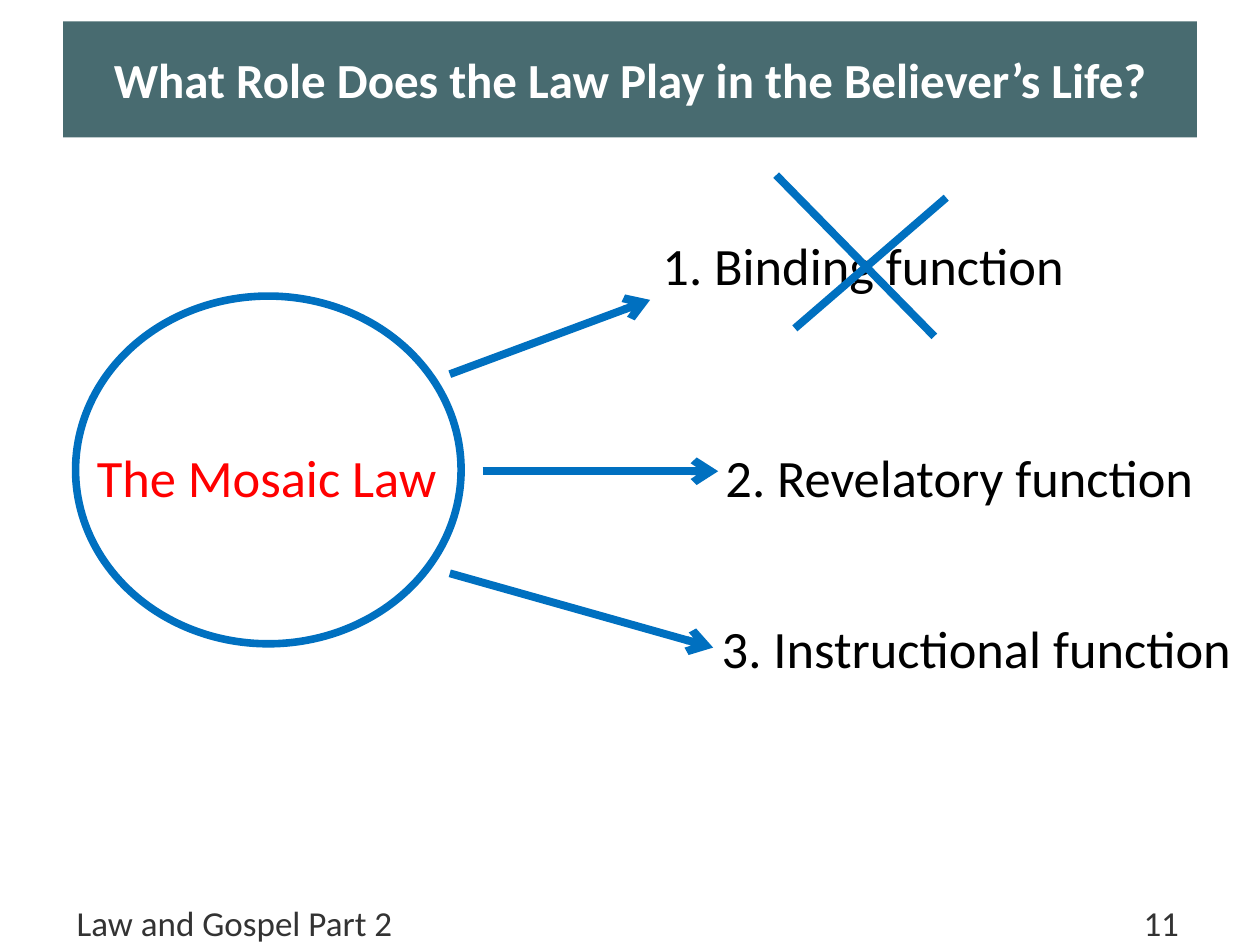
from lxml.etree import SubElement
from pptx import Presentation
from pptx.dml.color import RGBColor
from pptx.enum.shapes import MSO_CONNECTOR as Line, MSO_SHAPE as Shape
from pptx.enum.text import MSO_ANCHOR as Anchor, PP_ALIGN as Align
from pptx.oxml.ns import qn
from pptx.util import Inches, Pt

COLORS = {"teal": "486B70", "blue": "0070C0", "red": "FF0000",
          "black": "000000", "white": "FFFFFF", "gray": "333333"}
FONT = "Calibri"
CELL = Inches(0.1)  # the slide is a grid of 100 columns by 75 rows


def color(name):
    return RGBColor.from_string(COLORS[name])


def grid(*cells):
    return [round(n * CELL) for n in cells]


def style(par, size, tone, bold=False):
    for run in par.runs:
        font = run.font
        font.name, font.size, font.bold = FONT, Pt(size), bold
        font.color.rgb = color(tone)


def label(slide, text, box, size, tone):
    frame = slide.shapes.add_textbox(*grid(*box)).text_frame
    frame.word_wrap = True
    frame.text = text
    style(frame.paragraphs[0], size, tone)
    return frame


def stroke(slide, start, end, arrow=False):
    link = slide.shapes.add_connector(Line.STRAIGHT, *grid(*start, *end))
    link.line.color.rgb = color("blue")
    link.line.width = Pt(4.5)
    if arrow:
        SubElement(link.line._get_or_add_ln(), qn("a:tailEnd"), type="arrow")
    SubElement(link._element.spPr, qn("a:effectLst"))


# Title bar
def header(slide, text, box):
    title = slide.shapes.title
    title.left, title.top, title.width, title.height = grid(*box)
    title.fill.solid()
    title.fill.fore_color.rgb = color("teal")
    frame = title.text_frame
    frame.text = text
    frame.vertical_anchor = Anchor.MIDDLE
    par = frame.paragraphs[0]
    par.alignment = Align.CENTER
    style(par, 28, "white", True)


# Footer line with the page number at a right tab
def footer(slide, text, box):
    frame = label(slide, text, box, 20, "gray")
    frame.vertical_anchor = Anchor.MIDDLE
    tabs = SubElement(frame.paragraphs[0]._p.get_or_add_pPr(), qn("a:tabLst"))
    SubElement(tabs, qn("a:tab"), pos=str(Inches(8.75)), algn="r")


# Circle with the source of all three functions
def source(slide, text, box):
    x, y, w, h = box
    ring = slide.shapes.add_shape(Shape.OVAL, *grid(*box))
    ring.shadow.inherit = False
    ring.fill.background()
    ring.line.color.rgb = color("blue")
    ring.line.width = Pt(4.33)
    label(slide, text, (x + 0.7, y + 11.3, w, 6.1), 30, "red")


# One function with its arrow, whose ends are offsets from the box corner
def role(slide, text, box, start, tip):
    x, y = box[:2]
    stroke(slide, (x + start[0], y + start[1]), (x + tip[0], y + tip[1]), True)
    label(slide, text, box, 30, "black")


# Cross over a rejected function, its ends as shares of the box
def cross(slide, box):
    x, y, w, h = box
    for a, b, c, d in ((0, 0, 0.93, 1), (0.11, 0.95, 1, 0.14)):
        stroke(slide, (x + a * w, y + b * h), (x + c * w, y + d * h))


def main():
    deck = Presentation()
    deck.slide_width, deck.slide_height = grid(100, 75)
    slide = deck.slides.add_slide(deck.slide_layouts[5])
    footer(slide, "Law and Gospel Part 2\t11", (5.1, 70.3, 90, 5.8))
    header(slide, "What Role Does the Law Play in the Believer’s Life?",
           (5, 1.7, 90, 9.2))
    source(slide, "The Mosaic Law", (6, 23.5, 30.6, 27.6))
    role(slide, "1. Binding function", (51.6, 18, 41.7, 6.1),
         (-15.9, 11.7), (0, 5.8))
    cross(slide, (61.6, 13.9, 13.5, 12.8))
    role(slide, "2. Revelatory function", (56.6, 34.8, 41.7, 6.1),
         (-18.3, 2.6), (0.4, 2.6))
    role(slide, "3. Instructional function", (56.3, 48.4, 47.6, 6.1),
         (-20.6, -2.9), (0.3, 3))
    deck.save("out.pptx")


if __name__ == "__main__":
    main()
